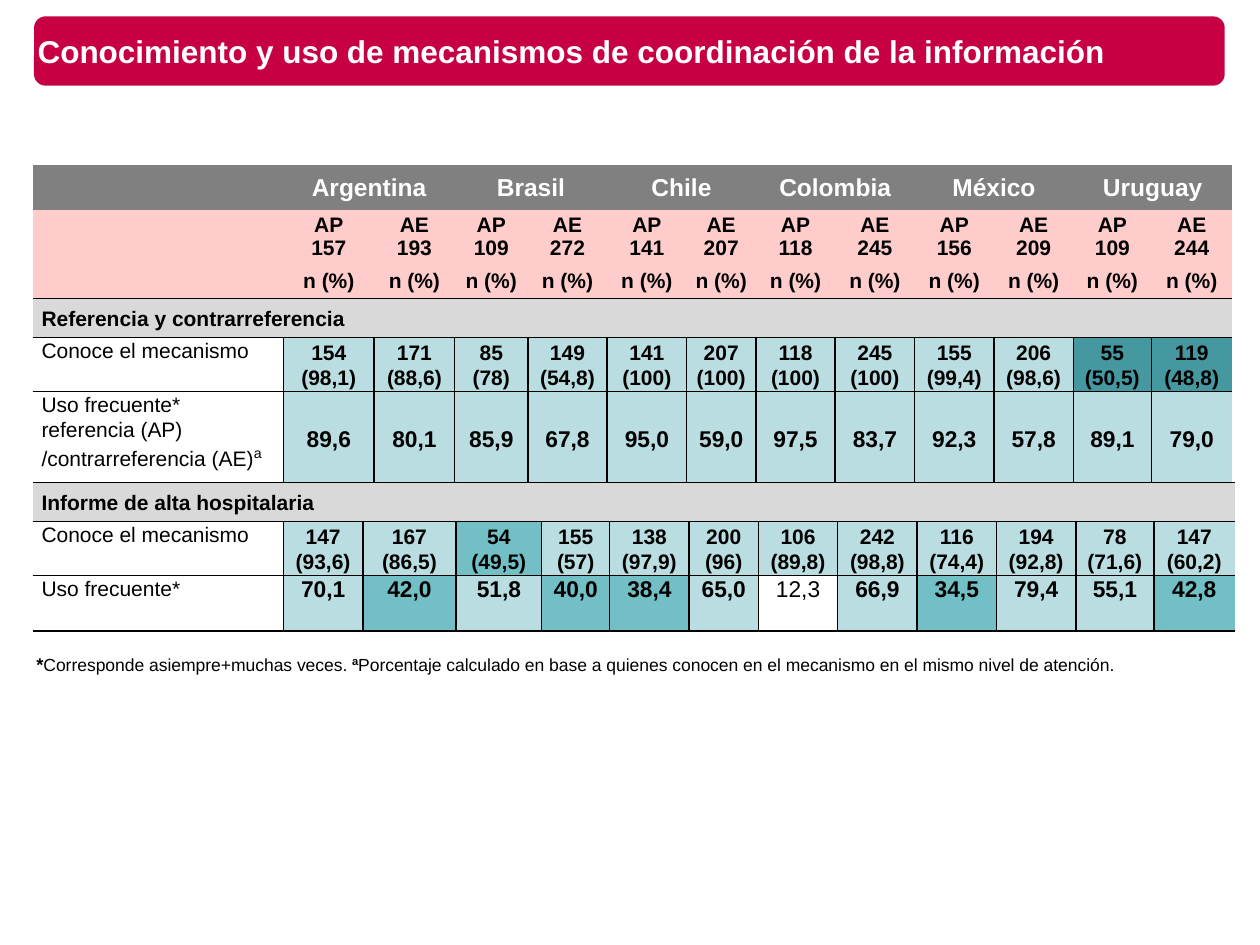
from lxml.etree import SubElement
from pptx import Presentation
from pptx.dml.color import RGBColor
from pptx.enum.shapes import MSO_SHAPE
from pptx.enum.text import MSO_ANCHOR, PP_ALIGN
from pptx.oxml.ns import qn
from pptx.util import Inches, Pt

BLACK, WHITE = "000000", "FFFFFF"
CRIMSON, GRAY, PINK, SECTION = "C70044", "808080", "FFCCCC", "D9D9D9"
LIGHT, MEDIUM, DARK = "BADDE1", "72BFC5", "4597A0"
PLAIN_TABLE = "{2D5ABB26-0587-4C30-8999-92F81FD0307C}"


def color(value):
    return RGBColor.from_string(value)


def add_span(para, text, size, bold=False, ink=BLACK, raised=False):
    span = para.add_run()
    span.text = text
    span.font.name = "Arial"
    span.font.size = Pt(size)
    span.font.bold = bold
    span.font.color.rgb = color(ink)
    if raised:
        span.font._element.set("baseline", "30000")


deck = Presentation()
deck.slide_width, deck.slide_height = Inches(10), Inches(7.5)
page = deck.slides.add_slide(deck.slide_layouts[6])

# Title banner
banner = page.shapes.add_shape(MSO_SHAPE.ROUNDED_RECTANGLE,
                               Inches(0.27), Inches(0.13), Inches(9.45), Inches(0.55))
banner.shadow.inherit = False
banner.fill.solid()
banner.fill.fore_color.rgb = color(CRIMSON)
banner.line.fill.background()

# Title and footnote: left, top, width, height, spans
texts = [
    (0.2, 0.13, 9.88, 0.55,
     [("Conocimiento y uso de mecanismos de coordinación de la información",
       18, True, WHITE)]),
    (0.19, 5.09, 9.52, 0.36,
     [("*", 10.5, True),
      ("Corresponde asiempre+muchas veces. ", 10),
      ("a", 11, True, BLACK, True),
      ("Porcentaje calculado en base a quienes conocen en el mecanismo "
       "en el mismo nivel de atención.", 10)]),
]
for left, top, width, height, spans in texts:
    box = page.shapes.add_textbox(Inches(left), Inches(top), Inches(width), Inches(height))
    box.text_frame.word_wrap = True
    box.text_frame.vertical_anchor = MSO_ANCHOR.MIDDLE
    for span in spans:
        add_span(box.text_frame.paragraphs[0], *span)

# Table contents; each row is (kind, label paragraphs, values)
countries = ["Argentina", "Brasil", "Chile", "Colombia", "México", "Uruguay"]
samples = [157, 193, 109, 272, 141, 207, 118, 245, 156, 209, 109, 244]
sample_cells = [f"{('AP', 'AE')[i % 2]}\n{n}" for i, n in enumerate(samples)]

reference_rows = [
    ("country", [], [text for name in countries for text in (name, "")]),
    ("head", [], sample_cells),
    ("head", [], ["n (%)"] * 12),
    ("section", ["Referencia y contrarreferencia"], [""] * 12),
    ("count", ["Conoce el mecanismo"],
     ["154 (98,1)", "171 (88,6)", "85 (78)", "149 (54,8)", "141 (100)", "207 (100)",
      "118 (100)", "245 (100)", "155 (99,4)", "206 (98,6)", "55 (50,5)", "119 (48,8)"]),
    ("use", ["Uso frecuente* referencia (AP)", "/contrarreferencia (AE)"],
     ["89,6", "80,1", "85,9", "67,8", "95,0", "59,0",
      "97,5", "83,7", "92,3", "57,8", "89,1", "79,0"]),
]
discharge_rows = [
    ("section", ["Informe de alta hospitalaria"], [""] * 12),
    ("count", ["Conoce el mecanismo"],
     ["147 (93,6)", "167 (86,5)", "54 (49,5)", "155 (57)", "138 (97,9)", "200 (96)",
      "106 (89,8)", "242 (98,8)", "116 (74,4)", "194 (92,8)", "78 (71,6)", "147 (60,2)"]),
    ("use", ["Uso frecuente*"],
     ["70,1", "42,0", "51,8", "40,0", "38,4", "65,0",
      "12,3", "66,9", "34,5", "79,4", "55,1", "42,8"]),
]
row_fills = {"country": GRAY, "head": PINK, "section": SECTION, "count": LIGHT, "use": LIGHT}

# Cells shaded differently from their row: (row, column) -> fill
reference_shades = {(4, 11): DARK, (4, 12): DARK}
discharge_shades = {(1, 3): MEDIUM, (2, 2): MEDIUM, (2, 4): MEDIUM, (2, 5): MEDIUM,
                    (2, 7): WHITE, (2, 9): MEDIUM, (2, 12): MEDIUM}

shared_widths = [0.63, 0.55, 0.63, 0.63, 0.63, 0.63, 0.62, 0.64]
tables = [
    (1.31, [1.99, 0.72, 0.64, 0.58, 0.63] + shared_widths,
     [0.36, 0.34, 0.29, 0.31, 0.31, 0.75],
     reference_rows, reference_shades, MSO_ANCHOR.MIDDLE),
    (3.83, [1.99, 0.63, 0.74, 0.68, 0.54] + shared_widths,
     [0.31, 0.31, 0.44],
     discharge_rows, discharge_shades, MSO_ANCHOR.TOP),
]

for top, widths, heights, rows, shades, use_anchor in tables:
    frame = page.shapes.add_table(len(rows), len(widths), Inches(0.26), Inches(top),
                                  Inches(sum(widths)), Inches(sum(heights)))
    table = frame.table
    table.first_row = table.horz_banding = False
    table._tbl.tblPr.find(qn("a:tableStyleId")).text = PLAIN_TABLE
    for column, width in zip(table.columns, widths):
        column.width = Inches(width)
    for table_row, height in zip(table.rows, heights):
        table_row.height = Inches(height)

    for r, (kind, label, values) in enumerate(rows):
        is_data = kind in ("count", "use")
        is_head = kind in ("country", "head")
        for c, text in enumerate(["\n".join(label)] + values):
            cell = table.cell(r, c)
            is_label = c == 0

            # Borders: rules around the data rows, uprights between countries
            sides = []
            if is_data and c % 2 == 1:
                sides.append("lnL")
            if is_data and c % 2 == 0 and c < 12:
                sides.append("lnR")
            if not is_head:
                sides.append("lnT")
            if not is_head or rows[r + 1][0] == "section":
                sides.append("lnB")
            for side in sides:
                line = SubElement(cell._tc.get_or_add_tcPr(), qn(f"a:{side}"), w="12700")
                ink = SubElement(line, qn("a:solidFill"))
                SubElement(ink, qn("a:srgbClr"), val=BLACK)

            # Fill, insets and anchor
            fill = WHITE if is_data and is_label else row_fills[kind]
            cell.fill.solid()
            cell.fill.fore_color.rgb = color(shades.get((r, c), fill))
            cell.margin_left = cell.margin_right = Inches(0.01 if is_head else 0.07)
            cell.margin_top = Inches(0.01 if is_head else 0)
            cell.margin_bottom = 0
            cell.vertical_anchor = MSO_ANCHOR.MIDDLE
            if is_data and is_label:
                cell.vertical_anchor = MSO_ANCHOR.TOP
            elif kind == "use":
                cell.vertical_anchor = use_anchor

            # Text
            size = {"country": 14, "use": 12 if is_label else 13}.get(kind, 12)
            bold = not (is_data and is_label) and shades.get((r, c)) != WHITE
            for i, part in enumerate(text.split("\n")):
                para = cell.text_frame.paragraphs[0] if i == 0 else cell.text_frame.add_paragraph()
                para.font.size = Pt(size)
                if not is_label:
                    para.alignment = PP_ALIGN.CENTER
                if not is_head:
                    para.line_spacing = 1.07
                if part:
                    add_span(para, part, size, bold, WHITE if kind == "country" else BLACK)
                if part.startswith("/"):
                    add_span(para, "a", 14, raised=True)

        # Merged cells
        if kind == "section":
            table.cell(r, 0).merge(table.cell(r, 12))
        elif kind == "country":
            for c in range(1, 13, 2):
                table.cell(r, c).merge(table.cell(r, c + 1))

deck.save("out.pptx")
